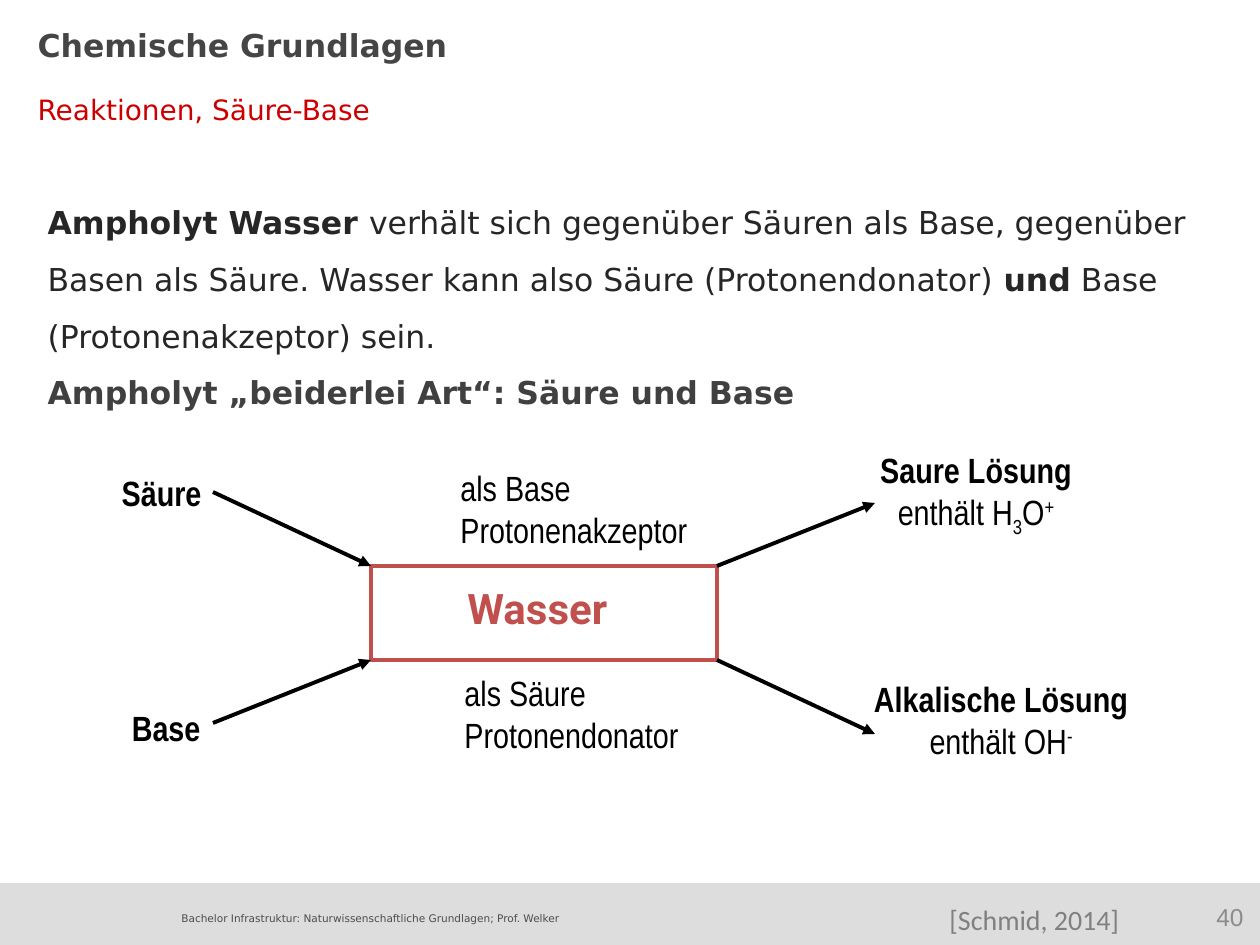
from lxml.etree import SubElement
from pptx import Presentation
from pptx.dml.color import RGBColor
from pptx.enum.shapes import MSO_CONNECTOR, MSO_SHAPE
from pptx.enum.text import MSO_ANCHOR, MSO_AUTO_SIZE, PP_ALIGN
from pptx.oxml.ns import qn
from pptx.util import Emu, Pt

PX_PER_INCH = 126
SANS, NARROW = "DejaVu Sans", "Arial Narrow"
BLACK, RED, GRAY = "000000", "C0504D", "DDDDDD"


def px(length):
    return Emu(round(length * 914400 / PX_PER_INCH))


def color(hex_value):
    return RGBColor.from_string(hex_value)


class SlideBuilder:
    """Holds the current slide and the default text style of the diagram."""

    def __init__(self, slide, font=NARROW, size=20, ink=BLACK):
        self.slide = slide
        self.font, self.size, self.ink = font, size, ink

    def run(self, paragraph, text, font=None, size=None, ink=None, bold=False, baseline=0):
        """Add one run; baseline is a percentage, negative for subscript."""
        run = paragraph.add_run()
        run.text = text
        run.font.name = font or self.font
        run.font.size = Pt(size or self.size)
        run.font.bold = bold
        run.font.color.rgb = color(ink or self.ink)
        if baseline:
            run.font._element.set("baseline", str(baseline * 1000))

    def fill_frame(self, frame, paragraphs, align=PP_ALIGN.LEFT, anchor=MSO_ANCHOR.TOP,
                   spacing=1.0, gap=0):
        """Write paragraphs, each a list of (text, style) runs; None breaks a line."""
        frame.word_wrap = True
        frame.auto_size = MSO_AUTO_SIZE.NONE
        frame.vertical_anchor = anchor
        for index, runs in enumerate(paragraphs):
            paragraph = frame.add_paragraph() if index else frame.paragraphs[0]
            paragraph.alignment = align
            paragraph.line_spacing = spacing
            paragraph.space_before = Pt(gap if index else 0)
            for part in runs:
                if part is None:
                    paragraph.add_line_break()
                else:
                    self.run(paragraph, part[0], **part[1])

    def placeholder(self, holder, box, paragraphs, **layout):
        holder.left, holder.top, holder.width, holder.height = map(px, box)
        self.fill_frame(holder.text_frame, paragraphs, **layout)
        for paragraph in holder.text_frame.paragraphs:
            properties = paragraph._p.get_or_add_pPr()
            properties.set("marL", "0")
            properties.set("indent", "0")
            SubElement(properties, qn("a:buNone"))

    def text(self, box, paragraphs, **layout):
        label = self.slide.shapes.add_textbox(*map(px, box))
        self.fill_frame(label.text_frame, paragraphs, **layout)

    def rectangle(self, box, fill=None, line=None):
        shape = self.slide.shapes.add_shape(MSO_SHAPE.RECTANGLE, *map(px, box))
        shape.shadow.inherit = False
        if fill:
            shape.fill.solid()
            shape.fill.fore_color.rgb = color(fill)
        else:
            shape.fill.background()
        if line:
            shape.line.color.rgb = color(line)
            shape.line.width = Pt(2.25)
        else:
            shape.line.fill.background()

    def arrow(self, start, end):
        connector = self.slide.shapes.add_connector(
            MSO_CONNECTOR.STRAIGHT, *map(px, (*start, *end)))
        connector.line.color.rgb = color(BLACK)
        connector.line.width = Pt(2.25)
        SubElement(connector.line._get_or_add_ln(), qn("a:tailEnd"), type="triangle")
        SubElement(connector._element.spPr, qn("a:effectLst"))


def main():
    deck = Presentation()
    deck.slide_width, deck.slide_height = px(1260), px(945)
    slide = deck.slides.add_slide(deck.slide_layouts[1])
    build = SlideBuilder(slide)
    bold = {"bold": True}

    # Footer
    build.rectangle((0, 883, 1260, 62), fill=GRAY)
    build.text((963, 892, 293, 50), [[("40", dict(font="Arial", size=14, ink="8C8C8C"))]],
               align=PP_ALIGN.RIGHT, anchor=MSO_ANCHOR.MIDDLE)
    build.text((169, 906, 700, 28), [[(
        "Bachelor Infrastruktur: Naturwissenschaftliche Grundlagen; Prof. Welker",
        dict(font=SANS, size=6, ink="4D4D4D"))]])
    build.text((937, 896, 210, 47),
               [[("[Schmid, 2014]", dict(font="Calibri", size=16, ink="808080"))]])

    # Heading and explanation
    build.placeholder(slide.shapes.title, (25, 20, 1207, 132), [
        [("Chemische Grundlagen", dict(font=SANS, size=18, ink="454545", bold=True))],
        [("Reaktionen, Säure-Base", dict(font=SANS, size=16, ink="CC0000"))],
    ], gap=16)
    plain = dict(font=SANS, size=18, ink="262626")
    strong = plain | bold
    build.placeholder(slide.placeholders[1], (35, 178, 1197, 242), [
        [("Ampholyt Wasser ", strong),
         ("verhält sich gegenüber Säuren als Base, gegenüber Basen als Säure. "
          "Wasser kann also Säure (Protonendonator) ", plain),
         ("und", strong),
         (" Base (Protonenakzeptor) sein.", plain)],
        [("Ampholyt „beiderlei Art“: Säure und Base", strong | {"ink": "404040"})],
    ], spacing=1.5)

    # Water with its two roles
    left, top, width, height = water = (371, 566, 346, 94)
    right, bottom = left + width, top + height
    build.rectangle(water, line=RED)
    build.text((455, 576, 200, 63),
               [[("Wasser", dict(font="Roboto", size=24, ink=RED, bold=True))]])
    for box, role, action in (
        ((448, 460, 270, 97), "als Base", "Protonenakzeptor"),
        ((452, 665, 270, 97), "als Säure", "Protonendonator"),
    ):
        build.text(box, [[(role, {})], [(action, {})]])

    # Reactants on the left, solutions on the right
    reach = 158
    build.arrow((left - reach, 492), (left, top))
    build.arrow((left - reach, 723), (left, bottom))
    build.arrow((right, top), (right + reach, 503))
    build.arrow((right, bottom), (right + reach, 734))
    for box, reactant in (((15, 465, 199, 54), "Säure"), ((24, 700, 189, 54), "Base")):
        build.text(box, [[(reactant, bold)]], align=PP_ALIGN.RIGHT)
    for box, solution, formula in (
        ((798, 442, 356, 97), "Saure Lösung",
         [("enthält H", {}), ("3", {"baseline": -25}), ("O", {}), ("+", {"baseline": 30})]),
        ((823, 671, 356, 97), "Alkalische Lösung",
         [("enthält OH", {}), ("-", {"baseline": 30})]),
    ):
        build.text(box, [[(solution, bold), None, *formula]], align=PP_ALIGN.CENTER)

    deck.save("out.pptx")


if __name__ == "__main__":
    main()
